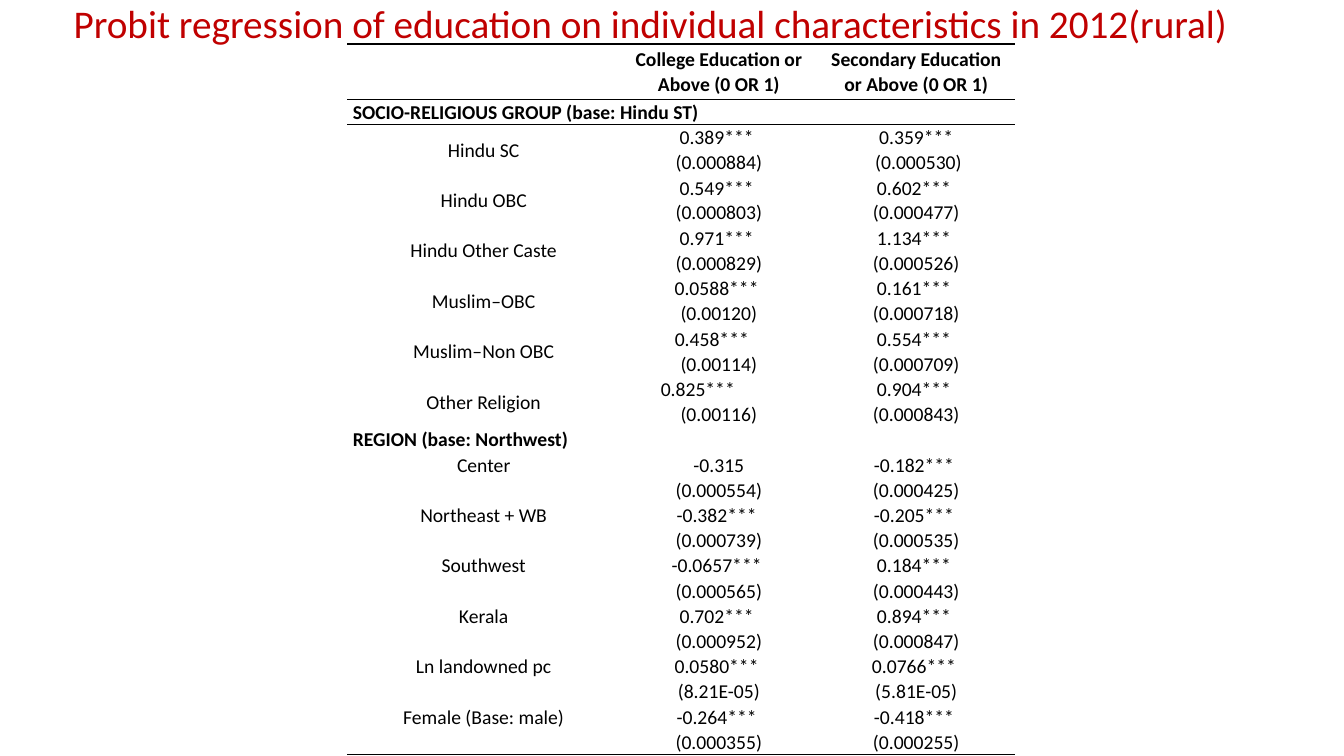
from lxml import etree
from pptx import Presentation
from pptx.dml.color import RGBColor
from pptx.enum.text import MSO_ANCHOR, MSO_AUTO_SIZE, PP_ALIGN
from pptx.oxml.ns import qn
from pptx.util import Pt

LEFT, CENTER = PP_ALIGN.LEFT, PP_ALIGN.CENTER
MIDDLE = MSO_ANCHOR.MIDDLE
FIXED = MSO_AUTO_SIZE.NONE

TITLE = "Probit regression of education on individual characteristics in 2012(rural)"
HEAD = ("", "College Education or Above (0 OR 1)", "Secondary Education or Above (0 OR 1)")
GROUP = "SOCIO-RELIGIOUS GROUP (base: Hindu ST)"
CASTES = [
    ("Hindu SC", "0.389*** \n(0.000884)", "0.359***\n (0.000530)"),
    ("Hindu OBC", "0.549*** \n(0.000803)", "0.602*** \n(0.000477)"),
    ("Hindu Other Caste", "0.971*** \n(0.000829)", "1.134*** \n(0.000526)"),
    ("Muslim–OBC", "0.0588*** \n(0.00120)", "0.161*** \n(0.000718)"),
    ("Muslim–Non OBC", "0.458***\n(0.00114)", "0.554*** \n(0.000709)"),
    ("Other Religion", "0.825***\n(0.00116)", "0.904*** \n(0.000843)"),
]
REGION = "REGION (base: Northwest)"
AREAS = [
    ("Center", "-0.315", "-0.182*** "),
    ("", "(0.000554)", "(0.000425)"),
    ("Northeast + WB", "-0.382*** ", "-0.205*** "),
    ("", "(0.000739)", "(0.000535)"),
    ("Southwest", "-0.0657*** ", "0.184*** "),
    ("", "(0.000565)", "(0.000443)"),
    ("Kerala", "0.702*** ", "0.894*** "),
    ("", "(0.000952)", "(0.000847)"),
    ("Ln landowned pc", "0.0580*** ", "0.0766*** "),
    ("", "(8.21E-05)", "(5.81E-05)"),
    ("Female (Base: male)", "-0.264*** \n(0.000355)", "-0.418*** \n(0.000255)"),
    ("", "", ""),
]
INDENTS = {"0.458***": 35, "0.825***": 25}
ROWS = [HEAD, (GROUP, "", ""), *CASTES, (REGION, "", ""), *AREAS]
BANDS = (1, 2 + len(CASTES))
LAST = len(ROWS)
RULES = (0, 1, 2, LAST)
WIDTHS = (195, 141, 141)
LINE = 18
HEIGHTS = [39.6, LINE] + [2 * LINE] * len(CASTES) + [LINE] * (1 + len(AREAS))


def color(code):
    return RGBColor.from_string(code)


def style(font, size, code, bold=False):
    font.name = "Calibri"
    font.size = Pt(size)
    font.bold = bold
    font.color.rgb = color(code)


def edge(cell, side, drawn):
    props = cell._tc.get_or_add_tcPr()
    line = etree.SubElement(props, qn("a:ln" + side), w=str(Pt(1)))
    if drawn:
        fill = etree.SubElement(line, qn("a:solidFill"))
        etree.SubElement(fill, qn("a:srgbClr"), val="000000")
    else:
        etree.SubElement(line, qn("a:noFill"))


def write(cell, text, row):
    cell.text_frame.text = text
    cell.vertical_anchor = MIDDLE
    cell.margin_left = cell.margin_right = Pt(4)
    cell.margin_top = cell.margin_bottom = 0
    for par in cell.text_frame.paragraphs:
        par.alignment = LEFT if row in BANDS else CENTER
        par.line_spacing = 1.04
        if par.text in INDENTS:
            par.alignment = LEFT
            par._p.get_or_add_pPr().set("marL", str(Pt(INDENTS[par.text])))
        for run in par.runs:
            style(run.font, 14, "000000", row == 0 or row in BANDS)
        if not par.runs:
            etree.SubElement(par._p, qn("a:endParaRPr"), sz="1400")


def add_title(slide):
    title = slide.shapes.title
    title.left, title.top = Pt(45.4), Pt(-4.3)
    title.width, title.height = Pt(853), Pt(41)
    frame = title.text_frame
    frame.text = TITLE
    frame.word_wrap = True
    frame.auto_size = FIXED
    frame.vertical_anchor = MIDDLE
    par = frame.paragraphs[0]
    par.alignment = LEFT
    par.line_spacing = 1
    style(par.runs[0].font, 28, "C00000")


def add_grid(slide):
    frame = slide.shapes.add_table(
        LAST, len(WIDTHS), Pt(248), Pt(31.4), Pt(sum(WIDTHS)), Pt(sum(HEIGHTS)))
    grid = frame.table
    grid.first_row = grid.horz_banding = False
    for col, width in zip(grid.columns, WIDTHS):
        col.width = Pt(width)
    for line, height in zip(grid.rows, HEIGHTS):
        line.height = Pt(height)
    for row in BANDS:
        grid.cell(row, 0).merge(grid.cell(row, 2))
    for col in (1, 2):
        grid.cell(LAST - 2, col).merge(grid.cell(LAST - 1, col))
    for row, texts in enumerate(ROWS):
        for col, text in enumerate(texts):
            cell = grid.cell(row, col)
            write(cell, text, row)
            end = row + (cell.span_height if cell.is_merge_origin else 1)
            for side, drawn in (("L", False), ("R", False),
                                ("T", row in RULES), ("B", end in RULES)):
                edge(cell, side, drawn)
            cell.fill.background()


def main():
    deck = Presentation()
    deck.slide_width, deck.slide_height = Pt(960), Pt(540)
    slide = deck.slides.add_slide(deck.slide_layouts[5])
    add_title(slide)
    add_grid(slide)
    deck.save("out.pptx")


if __name__ == "__main__":
    main()
